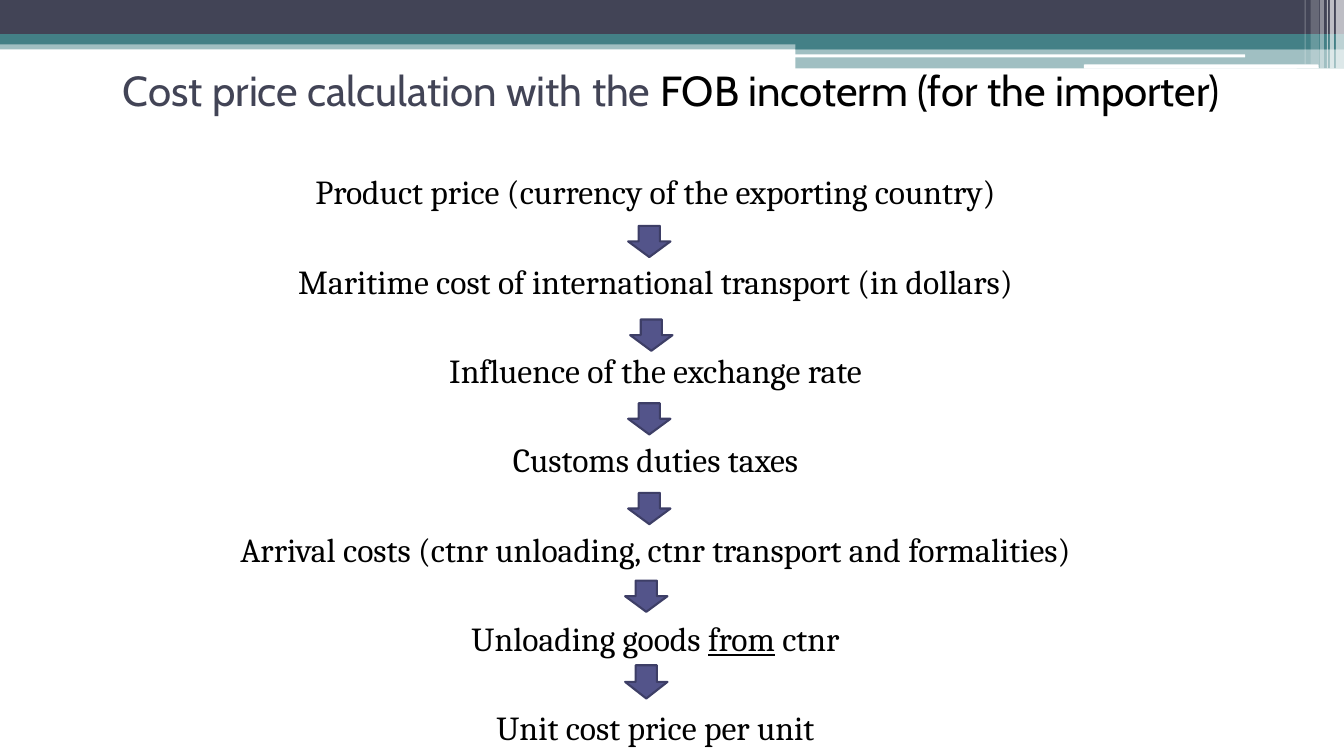
from lxml.etree import SubElement
from pptx import Presentation
from pptx.dml.color import RGBColor
from pptx.enum.shapes import MSO_SHAPE as Preset
from pptx.enum.text import MSO_ANCHOR as Anchor, MSO_AUTO_SIZE as AutoSize, PP_ALIGN as Align
from pptx.oxml.ns import qn
from pptx.util import Inches, Pt

COLORS = {
    "navy": "424456",
    "teal": "438086",
    "white": "FFFFFF",
    "black": "000000",
    "arrow": "53548A",
    "arrow_edge": "3D3E66",
}

BANDS = [
    (0, 0.4, 13.33, 0.09, "teal", 50),
    (0, 0, 13.33, 0.34, "navy", 100),
    (0, 0.34, 13.33, 0.1, "teal", 100),
    (7.89, 0.39, 5.44, 0.1, "teal", 100),
    (7.89, 0.48, 5.44, 0.2, "teal", 50),
]
GAPS = [(7.88, 0.54, 4.47, 0.03), (10.75, 0.64, 2.33, 0.04)]
STRIPES = [
    (13.25, 0.08, 0.68, 65),
    (13.19, 0.04, 0.68, 65),
    (13.16, 0.01, 0.68, 60),
    (13.09, 0.04, 0.68, 40),
    (13, 0.08, 0.64, 20),
    (12.94, 0.01, 0.64, 30),
]

TITLE = [
    ("Cost price calculation with the ", "navy"),
    ("FOB incoterm (for the importer)", "black"),
]
STEPS = [
    ["Product price (currency of the exporting country)"],
    ["Maritime cost of international transport (in dollars)"],
    ["Influence of the exchange rate"],
    ["Customs duties taxes"],
    ["Arrival costs (ctnr unloading, ctnr transport and formalities)"],
    ["Unloading goods ", "from", " ctnr"],
    ["Unit cost price per unit"],
]
UNDERLINED = "from"
ARROWS = [
    (6.23, 2.24, 0.31),
    (6.25, 3.17, 0.31),
    (6.23, 4, 0.31),
    (6.23, 4.89, 0.31),
    (6.2, 5.76, 0.31),
    (6.2, 6.6, 0.33),
]


def rgb(name):
    return RGBColor.from_string(COLORS[name])


def add_filled(slide, preset, box, color, opacity=100):
    shape = slide.shapes.add_shape(preset, *map(Inches, box))
    shape.shadow.inherit = False
    shape.fill.solid()
    shape.fill.fore_color.rgb = rgb(color)
    shape.line.fill.background()
    if opacity < 100:
        tint = shape.fill._xPr.find(".//" + qn("a:srgbClr"))
        SubElement(tint, qn("a:alpha"), val=str(opacity * 1000))
    return shape


def add_header(slide):
    for *box, color, opacity in BANDS:
        add_filled(slide, Preset.RECTANGLE, box, color, opacity)
    for box in GAPS:
        add_filled(slide, Preset.ROUNDED_RECTANGLE, box, "white")
    for left, width, height, opacity in STRIPES:
        add_filled(slide, Preset.RECTANGLE, (left, 0, width, height), "white", opacity)


def add_run(paragraph, text, font, size, color):
    run = paragraph.add_run()
    run.text = text
    run.font.name = font
    run.font.size = Pt(size)
    run.font.color.rgb = rgb(color)
    return run


def fill_title(slide):
    title = slide.shapes.title
    title.left, title.top = Inches(0.44), Inches(0.56)
    title.width, title.height = Inches(12.44), Inches(0.67)
    frame = title.text_frame
    frame.auto_size = AutoSize.NONE
    frame.vertical_anchor = Anchor.MIDDLE
    heading = frame.paragraphs[0]
    heading.alignment = Align.CENTER
    for text, color in TITLE:
        add_run(heading, text, "Cabin", 30, color)


def add_steps(slide):
    steps = slide.shapes.add_textbox(Inches(1.5), Inches(1.65), Inches(9.88), Inches(4.75))
    frame = steps.text_frame
    frame.word_wrap = True
    frame.margin_left = Inches(0.22)
    for index, parts in enumerate(STEPS):
        step = frame.add_paragraph() if index else frame.paragraphs[0]
        step.alignment = Align.CENTER
        step.space_before = Pt(35 if index else 3)
        for part in parts:
            run = add_run(step, part, "Cambria", 24, "black")
            if part == UNDERLINED:
                run.font.underline = True


def add_arrow(slide, left, top, height):
    arrow = add_filled(slide, Preset.DOWN_ARROW, (left, top, 0.42, height), "arrow")
    arrow.line.color.rgb = rgb("arrow_edge")
    arrow.line.width = Pt(1.5)


def main():
    deck = Presentation()
    deck.slide_width, deck.slide_height = Inches(13.33), Inches(7.5)
    slide = deck.slides.add_slide(deck.slide_layouts[5])
    add_header(slide)
    fill_title(slide)
    add_steps(slide)
    for arrow in ARROWS:
        add_arrow(slide, *arrow)
    deck.save("out.pptx")


if __name__ == "__main__":
    main()
